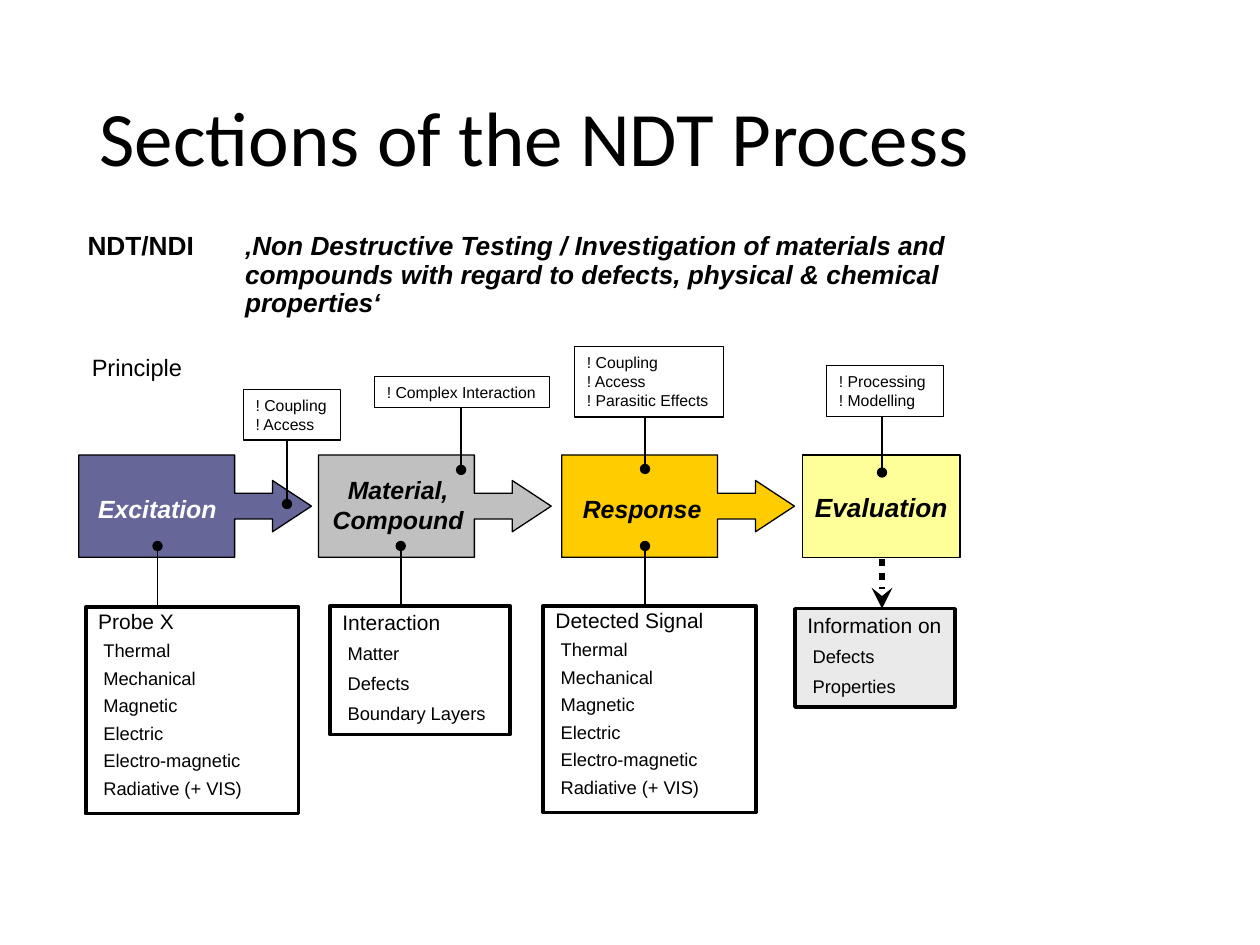
from pptx import Presentation
from pptx.dml.color import RGBColor
from pptx.enum.dml import MSO_LINE
from pptx.enum.shapes import MSO_CONNECTOR, MSO_SHAPE
from pptx.enum.text import MSO_ANCHOR, MSO_AUTO_SIZE, PP_ALIGN
from pptx.oxml.ns import qn
from pptx.util import Pt
from lxml.etree import SubElement

COLORS = {"black": "000000", "white": "FFFFFF", "violet": "666699", "silver": "C0C0C0",
          "gold": "FFCC00", "yellow": "FFFF99", "pale": "EAEAEA"}

TITLE = "Sections of the NDT Process"
TERM = "NDT/NDI"
DEFINITION = ("‚Non Destructive Testing / Investigation of materials and compounds "
              "with regard to defects, physical & chemical properties‘")
PROBES = ["Thermal", "Mechanical", "Magnetic", "Electric", "Electro-magnetic", "Radiative (+ VIS)"]

# Boxes are (left, top, width, height); a dot is the (x, y) where a lead line ends
STAGE_TOP, STAGE_HEIGHT = 260, 58.5
STAGES = [
    {"left": 45, "width": 133, "fill": "violet", "label": ["Excitation"], "label_box": (49, 278.6, 83.5, 24.5),
     "size": 14.2, "color": "white", "notes": ["! Coupling", "! Access"],
     "note_box": (139, 222.5, 55.5, 29), "note_dot": (164, 288), "list_x": 90,
     "list": ["Probe X"] + PROBES, "list_box": (49, 347, 121.7, 118), "list_fill": None, "spacing": 0.8},
    {"left": 182, "width": 133, "fill": "silver", "label": ["Material,", "Compound"],
     "label_box": (182, 268, 91, 42), "size": 14.2, "color": "black", "notes": ["! Complex Interaction"],
     "note_box": (214, 215, 100, 18), "note_dot": (263.5, 268.5), "list_x": 229,
     "list": ["Interaction", "Matter", "Defects", "Boundary Layers"],
     "list_box": (188.6, 346.3, 103, 73.4), "list_fill": "white", "spacing": 0.9},
    {"left": 321, "width": 133, "fill": "gold", "label": ["Response"], "label_box": (326, 278.6, 83.5, 24.5),
     "size": 14.2, "color": "black", "notes": ["! Coupling", "! Access", "! Parasitic Effects"],
     "note_box": (328.3, 198, 85, 40.3), "note_dot": (368.6, 268), "list_x": 368.6,
     "list": ["Detected Signal"] + PROBES, "list_box": (310.3, 346.3, 121.7, 118),
     "list_fill": None, "spacing": 0.8},
    {"left": 458.6, "width": 90, "fill": "yellow", "label": ["Evaluation"], "label_box": (458.6, 277, 91, 25),
     "size": 15, "color": "black", "notes": ["! Processing", "! Modelling"],
     "note_box": (472.3, 209, 67, 29), "note_dot": (504, 270), "list_x": 504,
     "list": ["Information on", "Defects", "Properties"],
     "list_box": (454.3, 347.8, 91.4, 56.2), "list_fill": "pale", "spacing": 0.9},
]


def rgb(name):
    return RGBColor.from_string(COLORS[name])


def points(values):
    return [Pt(value) for value in values]


def add_run(paragraph, text, size, color="black", bold=False, italic=False, font_name="Arial"):
    run = paragraph.add_run()
    run.text = text
    font = run.font
    font.name, font.size, font.bold, font.italic = font_name, Pt(size), bold, italic
    font.color.rgb = rgb(color)


def add_lines(paragraph, lines, size, **style):
    """Put the lines in one paragraph, parted by line breaks."""
    for index, line in enumerate(lines):
        if index:
            paragraph.add_line_break()
        add_run(paragraph, line, size, **style)


def set_indent(paragraph, left, first=0):
    properties = paragraph._p.get_or_add_pPr()
    properties.set("marL", str(Pt(left)))
    properties.set("indent", str(Pt(first)))


def add_text_box(slide, box, wrap=False):
    frame = slide.shapes.add_textbox(*points(box)).text_frame
    frame.word_wrap = wrap
    return frame


def add_box(slide, box, fill, line_width, kind=MSO_SHAPE.RECTANGLE):
    shape = slide.shapes.add_shape(kind, *points(box))
    shape.shadow.inherit = False
    if fill:
        shape.fill.solid()
        shape.fill.fore_color.rgb = rgb(fill)
    else:
        shape.fill.background()
    shape.line.color.rgb = rgb("black")
    shape.line.width = Pt(line_width)
    shape.text_frame.vertical_anchor = MSO_ANCHOR.TOP
    shape.text_frame.paragraphs[0].alignment = PP_ALIGN.LEFT
    return shape


def add_line(slide, start, end, width, end_tag, end_type, dash=None):
    line = slide.shapes.add_connector(MSO_CONNECTOR.STRAIGHT, *points(start + end))
    line.line.color.rgb = rgb("black")
    line.line.width = Pt(width)
    if dash:
        line.line.dash_style = dash
    SubElement(line.line._get_or_add_ln(), qn(end_tag)).set("type", end_type)
    SubElement(line._element.spPr, qn("a:effectLst"))


def add_stage(slide, stage):
    box = (stage["left"], STAGE_TOP, stage["width"], STAGE_HEIGHT)
    if stage is STAGES[-1]:
        add_box(slide, box, stage["fill"], 0.75)
    else:
        callout = add_box(slide, box, stage["fill"], 0.75, MSO_SHAPE.RIGHT_ARROW_CALLOUT)
        for index, value in enumerate((0.25, 0.25, 0.38, 0.67)):
            callout.adjustments[index] = value
    paragraph = add_text_box(slide, stage["label_box"]).paragraphs[0]
    paragraph.alignment = PP_ALIGN.CENTER if len(stage["label"]) > 1 else PP_ALIGN.LEFT
    add_lines(paragraph, stage["label"], stage["size"], color=stage["color"], bold=True, italic=True)


def add_note(slide, stage):
    left, top, width, height = stage["note_box"]
    dot = stage["note_dot"]
    add_line(slide, dot, (dot[0], top + height), 1, "a:headEnd", "oval")
    frame = add_box(slide, stage["note_box"], "white", 0.75).text_frame
    frame.word_wrap = False
    add_lines(frame.paragraphs[0], stage["notes"], 9)


def add_list(slide, stage):
    x, top = stage["list_x"], stage["list_box"][1]
    if stage is STAGES[-1]:
        add_line(slide, (x, 319.7), (x, top), 4, "a:tailEnd", "stealth", MSO_LINE.ROUND_DOT)
    else:
        add_line(slide, (x, 312), (x, top), 1, "a:headEnd", "oval")
    frame = add_box(slide, stage["list_box"], stage["list_fill"], 2).text_frame
    frame.word_wrap = stage is not STAGES[-1]
    for index, text in enumerate(stage["list"]):
        paragraph = frame.add_paragraph() if index else frame.paragraphs[0]
        paragraph.alignment = PP_ALIGN.LEFT
        paragraph.line_spacing = stage["spacing"]
        if index:
            set_indent(paragraph, 3)
            paragraph.space_before = Pt(5.7)
        add_run(paragraph, text, 10.5 if index else 12)


def add_headings(slide):
    title = slide.shapes.title
    title.left, title.top, title.width, title.height = points((49.7, 28.8, 620.6, 104.4))
    title.text_frame.auto_size = MSO_AUTO_SIZE.NONE
    title.text_frame.vertical_anchor = MSO_ANCHOR.MIDDLE
    paragraph = title.text_frame.paragraphs[0]
    paragraph.alignment = PP_ALIGN.LEFT
    paragraph.line_spacing = 0.9
    add_run(paragraph, TITLE, 44, font_name="Calibri")

    frame = add_text_box(slide, (45, 130.3, 517.7, 80.6), wrap=True)
    frame.margin_left = frame.margin_right = Pt(5)
    frame.margin_top = frame.margin_bottom = Pt(2.9)
    paragraph = frame.paragraphs[0]
    set_indent(paragraph, 90, -90)
    paragraph.line_spacing = 0.9
    add_run(paragraph, TERM + "\t", 15, bold=True)
    add_run(paragraph, DEFINITION, 15, bold=True, italic=True)

    add_run(add_text_box(slide, (45.4, 198, 67, 23.8)).paragraphs[0], "Principle", 13.5)


def main():
    presentation = Presentation()
    presentation.slide_width, presentation.slide_height = Pt(720), Pt(540)
    slide = presentation.slides.add_slide(presentation.slide_layouts[5])
    add_headings(slide)
    for add_part in (add_stage, add_note, add_list):
        for stage in STAGES:
            add_part(slide, stage)
    presentation.save("out.pptx")


if __name__ == "__main__":
    main()
